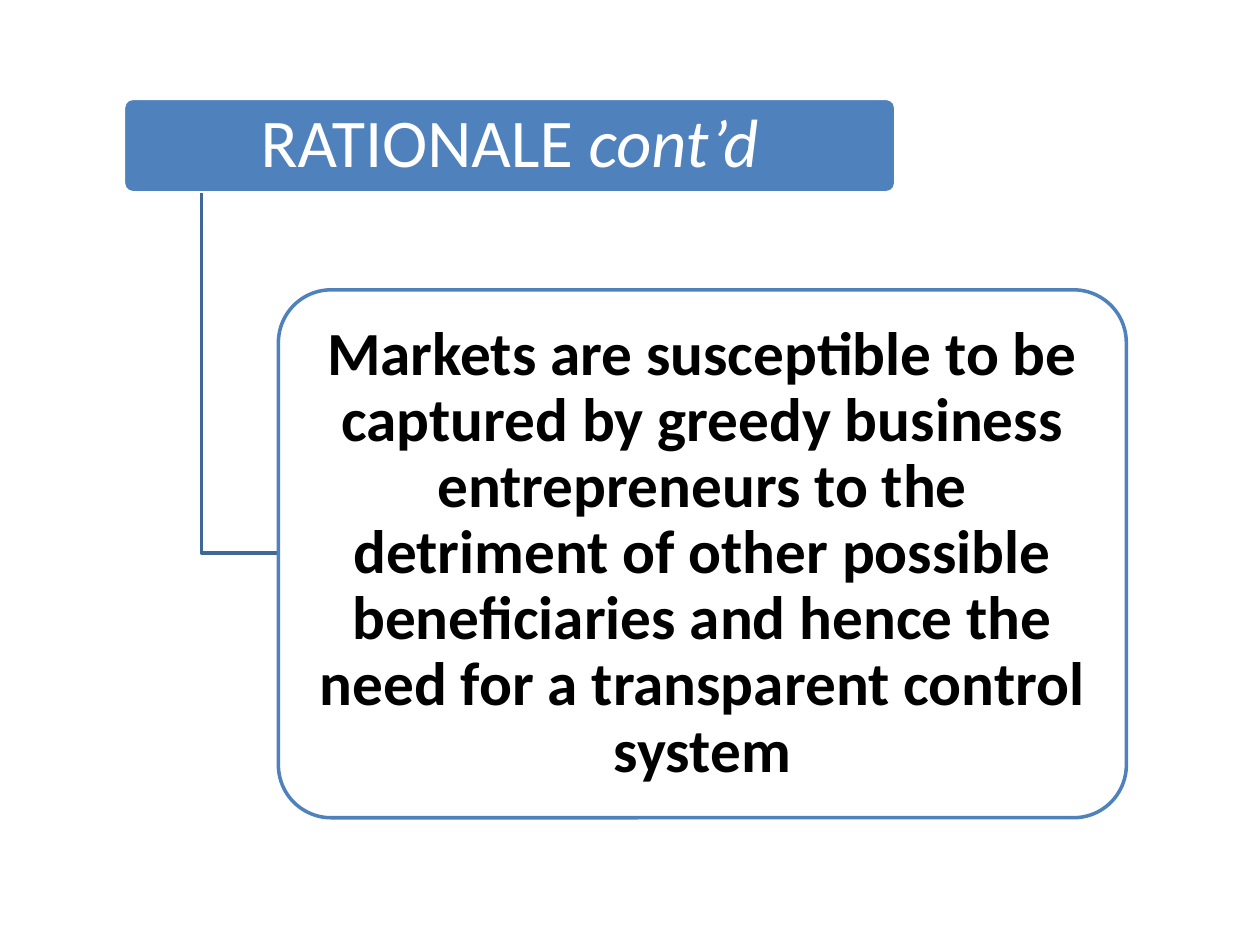
from lxml import etree
from pptx import Presentation
from pptx.dml.color import RGBColor
from pptx.enum.shapes import MSO_SHAPE
from pptx.enum.text import MSO_ANCHOR, PP_ALIGN
from pptx.oxml.ns import qn
from pptx.util import Inches, Pt

ROUNDED = MSO_SHAPE.ROUNDED_RECTANGLE
MIDDLE = MSO_ANCHOR.MIDDLE
CENTER = PP_ALIGN.CENTER
FONT = "Calibri"
BLUE, DARK_BLUE, WHITE, BLACK = "4F81BD", "3F6797", "FFFFFF", "000000"
LINE_WIDTH = 2


def color(hex_value):
    return RGBColor.from_string(hex_value)


def set_line(shape, hex_value):
    shape.line.color.rgb = color(hex_value)
    shape.line.width = Pt(LINE_WIDTH)


def set_opacity(shape, percent):
    fill_color = shape.fill._xPr.find(qn("a:solidFill"))[0]
    etree.SubElement(fill_color, qn("a:alpha")).set("val", str(percent * 1000))


def add_panel(slide, left, top, width, height, fill, line, insets):
    """Add a rounded panel; insets are the side and top/bottom margins."""
    shape = slide.shapes.add_shape(
        ROUNDED, Inches(left), Inches(top), Inches(width), Inches(height))
    shape.adjustments[0] = 0.1
    shape.shadow.inherit = False
    shape.fill.solid()
    shape.fill.fore_color.rgb = color(fill)
    set_line(shape, line)
    frame = shape.text_frame
    frame.word_wrap = True
    frame.vertical_anchor = MIDDLE
    frame.margin_left = frame.margin_right = Inches(insets[0])
    frame.margin_top = frame.margin_bottom = Inches(insets[1])
    return shape


def write_text(shape, runs, size, hex_value):
    """Write one centred paragraph from (text, bold, italic) runs."""
    paragraph = shape.text_frame.paragraphs[0]
    paragraph.alignment = CENTER
    paragraph.line_spacing = 0.9
    for text, bold, italic in runs:
        run = paragraph.add_run()
        run.text = text
        run.font.name = FONT
        run.font.size = Pt(size)
        run.font.bold = bold
        run.font.italic = italic
        run.font.color.rgb = color(hex_value)


def add_elbow(slide, points, hex_value):
    """Draw an open line through the points."""
    start, *others = [(Inches(x), Inches(y)) for x, y in points]
    builder = slide.shapes.build_freeform(*start)
    builder.add_line_segments(others, close=False)
    shape = builder.convert_to_shape()
    shape.shadow.inherit = False
    shape.fill.background()
    set_line(shape, hex_value)


def main():
    presentation = Presentation()
    presentation.slide_width = Inches(10)
    presentation.slide_height = Inches(7.5)
    slide = presentation.slides.add_slide(presentation.slide_layouts[6])

    # Heading
    heading = add_panel(slide, 0.98, 0.78, 6.13, 0.75, BLUE, WHITE, (0.11, 0.07))
    write_text(heading, [("RATIONALE ", False, False), ("cont’d", False, True)],
               39, WHITE)

    # Branch from the heading to the statement
    add_elbow(slide, [(1.6, 1.53), (1.6, 4.39), (2.21, 4.39)], DARK_BLUE)

    # Statement
    statement = add_panel(slide, 2.21, 2.3, 6.73, 4.19, WHITE, BLUE, (0.19, 0.17))
    set_opacity(statement, 90)
    write_text(statement, [(
        "Markets are susceptible to be captured by greedy business "
        "entrepreneurs to the detriment of other possible beneficiaries "
        "and hence the need for a transparent control system", True, False)],
        35, BLACK)

    presentation.save("out.pptx")


if __name__ == "__main__":
    main()
